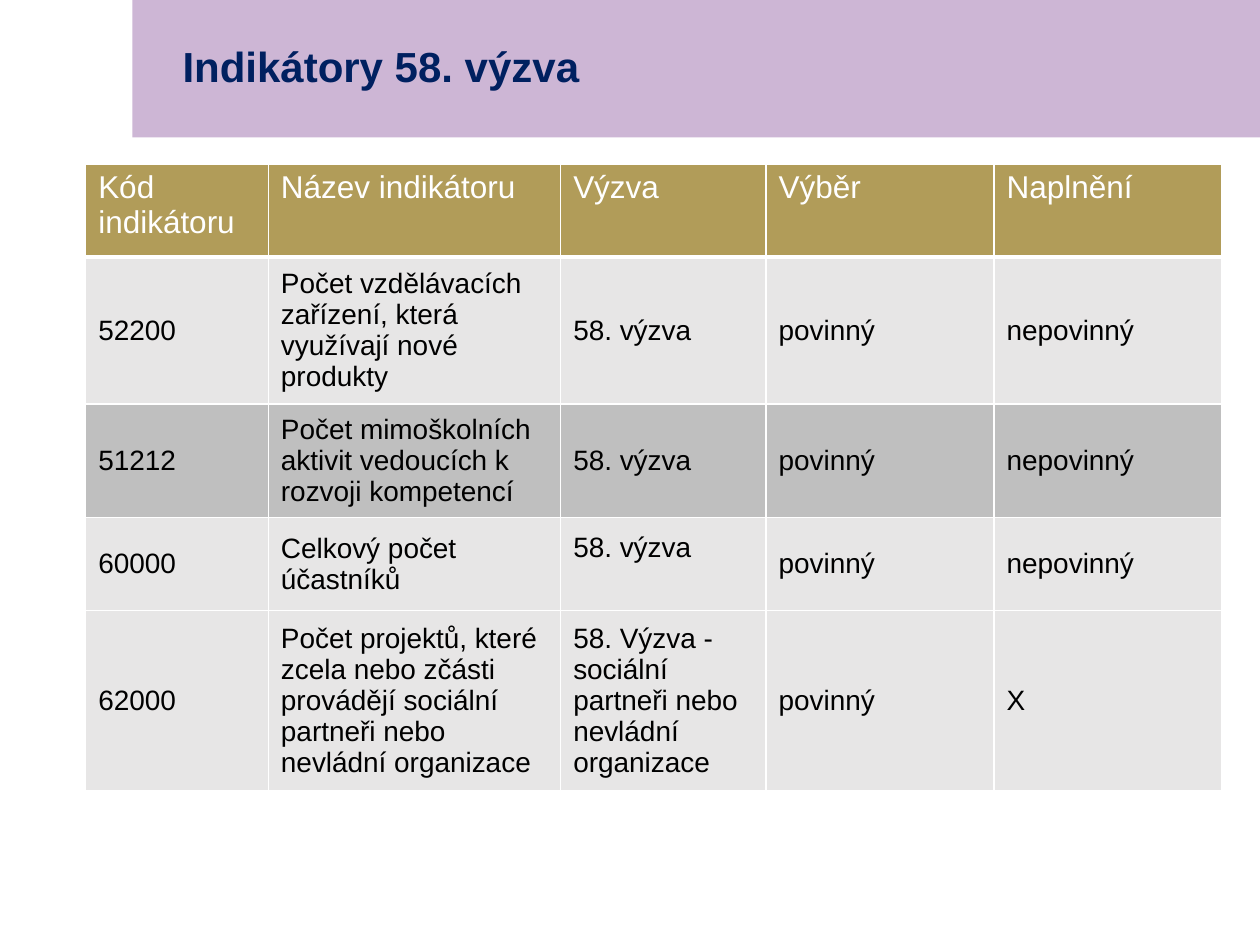
from lxml import etree
from pptx import Presentation
from pptx.dml.color import RGBColor
from pptx.enum.shapes import MSO_SHAPE
from pptx.enum.text import MSO_ANCHOR
from pptx.oxml.ns import qn
from pptx.util import Inches, Pt

# Content
TITLE = "Indikátory 58. výzva"
HEADER = ["Kód indikátoru", "Název indikátoru", "Výzva", "Výběr", "Naplnění"]
ROWS = [
    ["52200", "Počet vzdělávacích zařízení, která využívají nové produkty",
     "58. výzva", "povinný", "nepovinný"],
    ["51212", "Počet mimoškolních aktivit vedoucích k rozvoji kompetencí",
     "58. výzva", "povinný", "nepovinný"],
    ["60000", "Celkový počet účastníků", "58. výzva", "povinný", "nepovinný"],
    ["62000", "Počet projektů, které zcela nebo zčásti provádějí sociální "
     "partneři nebo nevládní organizace",
     "58. Výzva - sociální partneři nebo nevládní organizace", "povinný", "X"],
]
COL_WIDTHS = [1.45, 2.32, 1.63, 1.81, 1.81]
ROW_HEIGHTS = [0.74, 1.08, 0.84, 0.74, 1.33]
RAISED_CELL = (3, 2)  # sits one line higher than its neighbours

# Colours and formats
WHITE = RGBColor(0xFF, 0xFF, 0xFF)
BLACK = RGBColor(0x00, 0x00, 0x00)
NAVY = RGBColor(0x00, 0x20, 0x60)
LILAC = RGBColor(0xCD, 0xB6, 0xD5)
GOLD = RGBColor(0xB1, 0x9C, 0x59)
LIGHT = RGBColor(0xE7, 0xE6, 0xE6)
GREY = RGBColor(0xBF, 0xBF, 0xBF)
ROW_FILLS = [GOLD, LIGHT, GREY, LIGHT, LIGHT]
TITLE_FONT = {"size": Pt(24), "bold": True, "color": NAVY}
HEADER_FONT = {"size": Pt(18), "bold": False, "color": WHITE}
BODY_FONT = {"size": Pt(16), "bold": False, "color": BLACK}


def write(tf, text, fmt):
    r = tf.paragraphs[0].add_run()
    r.text = text
    r.font.name = "Arial"
    for key, value in fmt.items():
        if key == "color":
            r.font.color.rgb = value
        else:
            setattr(r.font, key, value)


def add_borders(cell, bottom):
    tc_pr = cell._tc.get_or_add_tcPr()
    for side, width in (("L", 1), ("R", 1), ("T", 1), ("B", bottom)):
        ln = etree.SubElement(tc_pr, qn(f"a:ln{side}"), w=str(Pt(width)))
        fill = etree.SubElement(ln, qn("a:solidFill"))
        etree.SubElement(fill, qn("a:srgbClr"), val=str(WHITE))


prs = Presentation()
prs.slide_width, prs.slide_height = Inches(10), Inches(7.5)
s = prs.slides.add_slide(prs.slide_layouts[6])

# Title band
band = s.shapes.add_shape(MSO_SHAPE.RECTANGLE, Inches(1.05), 0, Inches(8.95), Inches(1.09))
band.shadow.inherit = False
band.fill.solid()
band.fill.fore_color.rgb = LILAC
band.line.fill.background()

tf = s.shapes.add_textbox(Inches(1.35), 0, Inches(8.35), Inches(1.09)).text_frame
tf.word_wrap = True
tf.vertical_anchor = MSO_ANCHOR.MIDDLE
tf.paragraphs[0].line_spacing = 0.9
write(tf, TITLE, TITLE_FONT)

# Indicator table
table = s.shapes.add_table(len(ROW_HEIGHTS), len(COL_WIDTHS), Inches(0.68), Inches(1.3),
                           Inches(sum(COL_WIDTHS)), Inches(sum(ROW_HEIGHTS))).table
for col, width in zip(table.columns, COL_WIDTHS):
    col.width = Inches(width)
for row, height in zip(table.rows, ROW_HEIGHTS):
    row.height = Inches(height)

for i, texts in enumerate([HEADER] + ROWS):
    is_header = i == 0
    for j, text in enumerate(texts):
        cell = table.cell(i, j)
        add_borders(cell, 3 if i == 0 else 1)
        cell.fill.solid()
        cell.fill.fore_color.rgb = ROW_FILLS[i]
        cell.vertical_anchor = MSO_ANCHOR.TOP if is_header else MSO_ANCHOR.MIDDLE
        if (i, j) == RAISED_CELL:
            cell.margin_bottom = Inches(0.3)
        write(cell.text_frame, text, HEADER_FONT if is_header else BODY_FONT)

prs.save("out.pptx")
